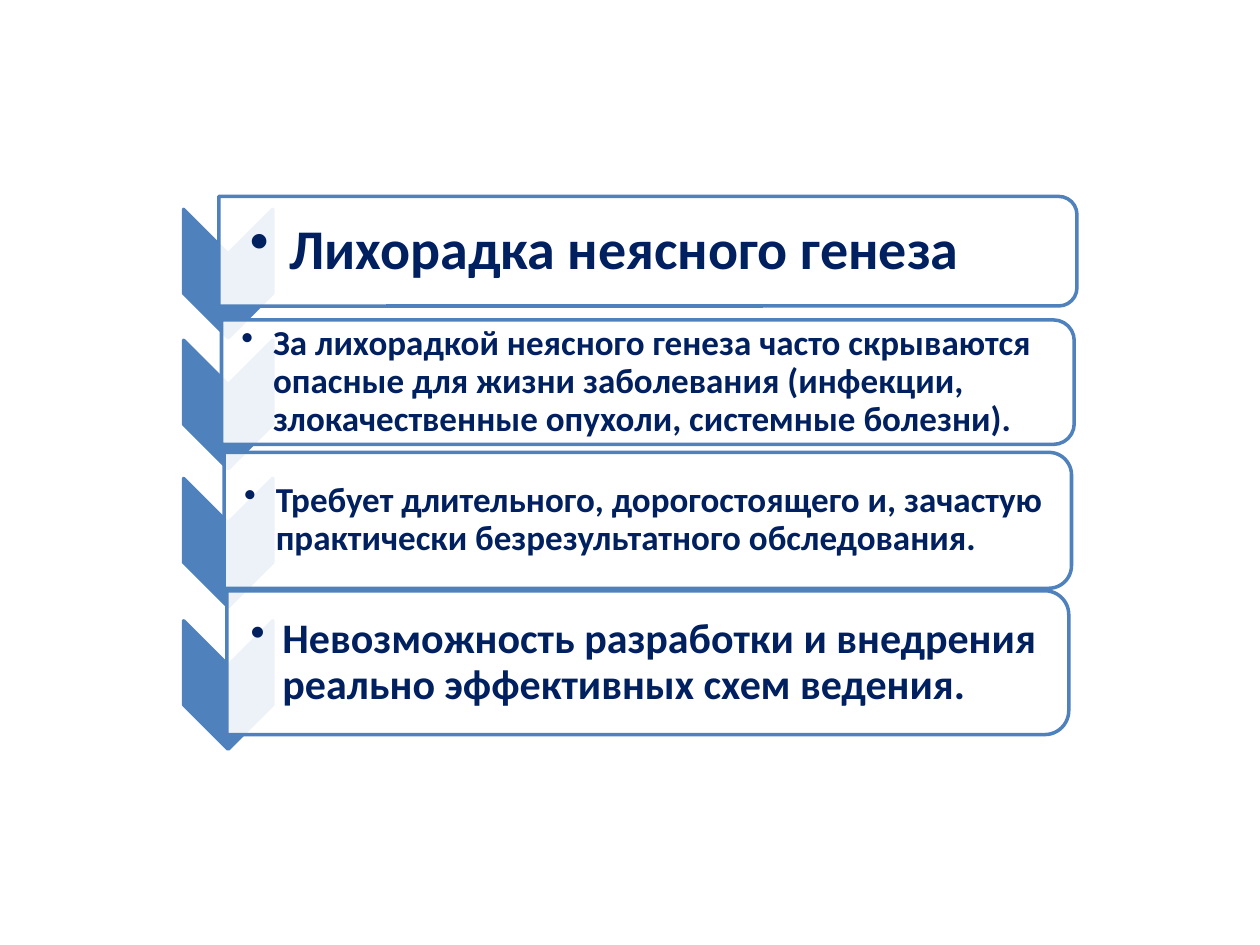
from dataclasses import dataclass

from lxml.etree import SubElement
from pptx import Presentation
from pptx.dml.color import RGBColor
from pptx.enum.shapes import MSO_SHAPE as Preset
from pptx.enum.text import MSO_ANCHOR as Anchor, PP_ALIGN as Align
from pptx.oxml.ns import qn
from pptx.util import Cm, Pt


@dataclass(frozen=True)
class Theme:
    accent: str = "4F81BD"
    panel: str = "FFFFFF"
    text: str = "002060"
    font: str = "Calibri"
    title: int = 32
    large: int = 24
    body: int = 20
    line: int = 2
    panel_opacity: int = 90


@dataclass(frozen=True)
class Box:
    """Lengths in centimetres."""
    left: float
    top: float
    width: float
    height: float

    @property
    def middle(self):
        return self.top + self.height / 2


THEME = Theme()
AXIS = 13.06
CHEVRON_CENTER = 4.6
CHEVRON_DROP = 0.45
CHEVRON_LENGTH, CHEVRON_WIDTH = 2.59, 1.8

# text, size, panel top, panel height, left inset, hanging indent
ROWS = [
    ("Лихорадка неясного генеза", THEME.title, 3.96, 2.21, 0.63, 0.79),
    ("За лихорадкой неясного генеза часто скрываются опасные для жизни "
     "заболевания (инфекции, злокачественные опухоли, системные болезни).",
     THEME.body, 6.45, 2.51, 0.4, 0.64),
    ("Требует длительного, дорогостоящего и, зачастую практически "
     "безрезультатного обследования.", THEME.body, 9.12, 2.74, 0.4, 0.64),
    ("Невозможность разработки и внедрения реально эффективных схем ведения.",
     THEME.large, 11.91, 2.9, 0.48, 0.64),
]


def add_turned_shape(shapes, preset, center_x, center_y, length, breadth, fill, opacity=100):
    """Place a preset turned by 90 degrees; length is its unturned width."""
    shape = shapes.add_shape(preset, Cm(center_x - length / 2), Cm(center_y - breadth / 2),
                             Cm(length), Cm(breadth))
    shape.rotation = 90
    shape.shadow.inherit = False
    shape.fill.solid()
    shape.fill.fore_color.rgb = RGBColor.from_string(fill)
    if opacity < 100:
        color = shape.fill._xPr.find(qn("a:solidFill"))[0]
        SubElement(color, qn("a:alpha"), val=str(opacity * 1000))
    shape.line.color.rgb = RGBColor.from_string(THEME.accent)
    shape.line.width = Pt(THEME.line)


def add_bullet_text(shapes, box, text, *, size, inset, indent):
    shape = shapes.add_textbox(Cm(box.left), Cm(box.top), Cm(box.width), Cm(box.height))
    frame = shape.text_frame
    frame.word_wrap = True
    frame.vertical_anchor = Anchor.MIDDLE
    frame.margin_left = Cm(inset)
    frame.margin_top = frame.margin_right = frame.margin_bottom = Cm(0.04)

    paragraph = frame.paragraphs[0]
    paragraph.level = 1
    paragraph.alignment = Align.LEFT
    paragraph.line_spacing = 0.9
    properties = paragraph._p.get_or_add_pPr()
    properties.set("marL", str(Cm(indent)))
    properties.set("indent", str(-Cm(indent)))
    SubElement(properties, qn("a:buChar"), char="•")

    run = paragraph.add_run()
    run.text = text
    run.font.name = THEME.font
    run.font.size = Pt(size)
    run.font.bold = True
    run.font.color.rgb = RGBColor.from_string(THEME.text)


def add_chevron_row(shapes, box, text, **text_format):
    add_turned_shape(shapes, Preset.CHEVRON, CHEVRON_CENTER, box.middle + CHEVRON_DROP,
                     CHEVRON_LENGTH, CHEVRON_WIDTH, THEME.accent)
    add_turned_shape(shapes, Preset.ROUND_2_SAME_RECTANGLE, box.left + box.width / 2,
                     box.middle, box.height, box.width, THEME.panel, THEME.panel_opacity)
    text_box = Box(box.left, box.top + 0.12, box.width - 0.13, box.height - 0.24)
    add_bullet_text(shapes, text_box, text, **text_format)


def add_chevron_list(slide):
    group = slide.shapes.add_group_shape()
    for index, (text, size, top, height, inset, indent) in enumerate(ROWS):
        width = 17.3 - 0.11 * index
        box = Box(AXIS - width / 2, top, width, height)
        add_chevron_row(group.shapes, box, text, size=size, inset=inset, indent=indent)


def main():
    presentation = Presentation()
    presentation.slide_width, presentation.slide_height = Cm(25.4), Cm(19.05)
    slide = presentation.slides.add_slide(presentation.slide_layouts[6])
    add_chevron_list(slide)
    presentation.save("out.pptx")


if __name__ == "__main__":
    main()
